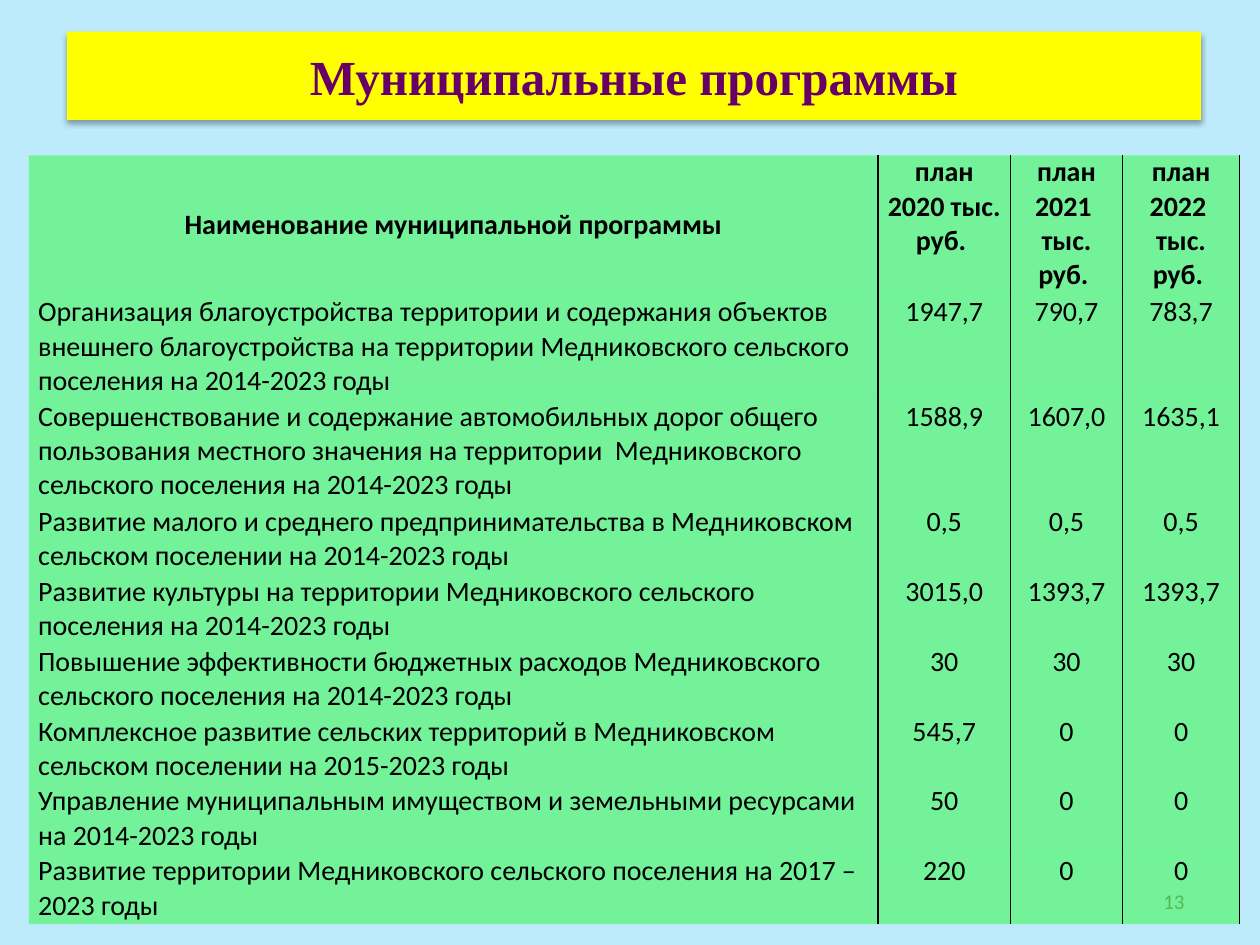
from lxml import etree
from pptx import Presentation
from pptx.dml.color import RGBColor
from pptx.enum.shapes import MSO_SHAPE
from pptx.enum.text import MSO_ANCHOR, PP_ALIGN
from pptx.oxml import parse_xml
from pptx.util import Cm, Pt

RECT = MSO_SHAPE.RECTANGLE
TOP, MIDDLE = MSO_ANCHOR.TOP, MSO_ANCHOR.MIDDLE
LEFT, CENTER, RIGHT = PP_ALIGN.LEFT, PP_ALIGN.CENTER, PP_ALIGN.RIGHT
NS = "http://schemas.openxmlformats.org/drawingml/2006/main"

COLORS = {
    "sky": "BDEBFB",
    "green": "00FF00",
    "yellow": "FFFF00",
    "plum": "660066",
    "gray": "8C8C8C",
    "black": "000000",
}

HEADS = ["Наименование муниципальной программы"] + [
    f"план {when} тыс. руб. " for when in ("2020", "2021 ", "2022 ")
]
PLANS = [
    ("Организация благоустройства территории и содержания объектов внешнего "
     "благоустройства на территории Медниковского сельского поселения на 2014-2023 годы",
     "1947,7", "790,7", "783,7"),
    ("Совершенствование и содержание автомобильных дорог общего пользования местного "
     "значения на территории  Медниковского сельского поселения на 2014-2023 годы",
     "1588,9", "1607,0", "1635,1"),
    ("Развитие малого и среднего предпринимательства в Медниковском сельском "
     "поселении на 2014-2023 годы", "0,5", "0,5", "0,5"),
    ("Развитие культуры на территории Медниковского сельского поселения "
     "на 2014-2023 годы", "3015,0", "1393,7", "1393,7"),
    ("Повышение эффективности бюджетных расходов Медниковского сельского "
     "поселения на 2014-2023 годы", "30", "30", "30"),
    ("Комплексное развитие сельских территорий в Медниковском сельском "
     "поселении на 2015-2023 годы", "545,7", "0", "0"),
    ("Управление муниципальным имуществом и земельными ресурсами "
     "на 2014-2023 годы", "50", "0", "0"),
    ("Развитие территории Медниковского сельского поселения на 2017 – 2023 годы",
     "220", "0", "0"),
]
WIDTHS = [17.12, 2.67, 2.26, 2.36]
HEIGHTS = [2.82] + [2.11] * 2 + [1.41] * 6


def color(name):
    return RGBColor.from_string(COLORS[name])


class Deck:
    """Holds the text style and the current slide."""

    font = "Calibri"
    size = 16

    def __init__(self, slide):
        self.slide = slide
        fill = slide.background.fill
        fill.solid()
        fill.fore_color.rgb = color("sky")

    def text(self, frame, words, align, ink="black", size=None, font=None, bold=False):
        frame.word_wrap = True
        para = frame.paragraphs[0]
        para.text = words
        para.alignment = align
        para.font.name = font or self.font
        para.font.size = Pt(size or self.size)
        para.font.bold = bold
        para.font.color.rgb = color(ink)

    def label(self, box, words, align, **style):
        frame = self.slide.shapes.add_textbox(*map(Cm, box)).text_frame
        frame.vertical_anchor = MIDDLE
        self.text(frame, words, align, **style)

    def banner(self, box, words, **style):
        shape = self.slide.shapes.add_shape(RECT, *map(Cm, box))
        shape.fill.solid()
        shape.fill.fore_color.rgb = color("yellow")
        shape.line.fill.background()
        shape.text_frame.vertical_anchor = MIDDLE
        self.text(shape.text_frame, words, CENTER, **style)
        shape._element.spPr.append(parse_xml(
            f'<a:effectLst xmlns:a="{NS}"><a:outerShdw blurRad="{Pt(3.1)}" '
            f'dist="{Pt(1.8)}" dir="5400000" rotWithShape="0">'
            f'<a:srgbClr val="{COLORS["black"]}"><a:alpha val="35000"/></a:srgbClr>'
            '</a:outerShdw></a:effectLst>'))

    def table(self, left, top, rows):
        grid = self.slide.shapes.add_table(
            len(rows), len(WIDTHS), Cm(left), Cm(top),
            Cm(sum(WIDTHS)), Cm(sum(HEIGHTS))).table
        grid.first_row = grid.horz_banding = False
        for col, width in zip(grid.columns, WIDTHS):
            col.width = Cm(width)
        for r, (height, row) in enumerate(zip(HEIGHTS, rows)):
            grid.rows[r].height = Cm(height)
            for c, words in enumerate(row):
                self.cell(grid.cell(r, c), words, head=r == 0, first=c == 0)

    def cell(self, cell, words, head, first):
        cell.margin_left = cell.margin_right = Cm(0.19)
        cell.margin_top = cell.margin_bottom = 0
        cell.vertical_anchor = MIDDLE if head and first else TOP
        align = LEFT if first and not head else CENTER
        self.text(cell.text_frame, words, align, bold=head)
        cell.fill.solid()
        cell.fill.fore_color.rgb = color("green")
        props = cell._tc.get_or_add_tcPr()
        tint = props.find(f".//{{{NS}}}srgbClr")
        etree.SubElement(tint, f"{{{NS}}}alpha", val="39000")
        sides = {"L": not first, "R": True, "T": False, "B": False}
        for spot, (side, drawn) in enumerate(sides.items()):
            props.insert(spot, self.edge(side, drawn))

    def edge(self, side, drawn):
        paint = "<a:noFill/>"
        if drawn:
            paint = f'<a:solidFill><a:srgbClr val="{COLORS["black"]}"/></a:solidFill>'
        return parse_xml(f'<a:ln{side} xmlns:a="{NS}" w="{Pt(0.75)}">{paint}</a:ln{side}>')


def main():
    prs = Presentation()
    prs.slide_width, prs.slide_height = Cm(25.4), Cm(19.05)
    deck = Deck(prs.slides.add_slide(prs.slide_layouts[6]))
    deck.label((18.2, 17.66, 5.93, 1.01), "13", RIGHT, ink="gray", size=12)
    deck.table(0.58, 3.13, [HEADS] + PLANS)
    deck.banner((1.35, 0.64, 22.86, 1.78), "Муниципальные программы",
                ink="plum", size=28, font="Times New Roman", bold=True)
    prs.save("out.pptx")


if __name__ == "__main__":
    main()
